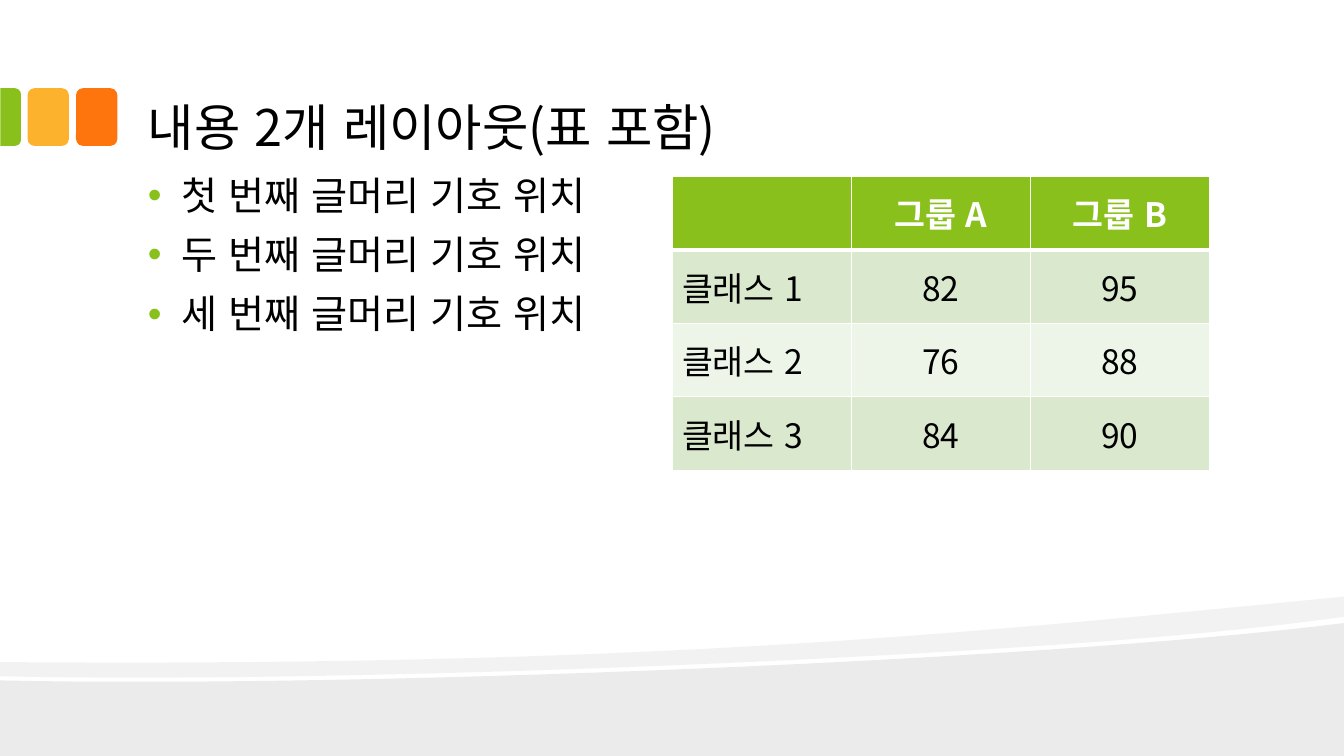
from lxml import etree
from pptx import Presentation
from pptx.dml.color import RGBColor
from pptx.enum.lang import MSO_LANGUAGE_ID
from pptx.enum.shapes import MSO_SHAPE
from pptx.enum.text import MSO_ANCHOR, MSO_AUTO_SIZE, PP_ALIGN
from pptx.oxml import parse_xml
from pptx.oxml.ns import qn
from pptx.util import Pt

KOREAN = MSO_LANGUAGE_ID.KOREAN
ROUNDED, ROUNDED_TOP = MSO_SHAPE.ROUNDED_RECTANGLE, MSO_SHAPE.ROUND_2_SAME_RECTANGLE
TOP, MIDDLE, BOTTOM = MSO_ANCHOR.TOP, MSO_ANCHOR.MIDDLE, MSO_ANCHOR.BOTTOM
LEFT, CENTER = PP_ALIGN.LEFT, PP_ALIGN.CENTER
NO_AUTOFIT = MSO_AUTO_SIZE.NONE
FONT = "Noto Sans CJK KR"
GREEN, YELLOW, ORANGE = "89C01C", "FCB22C", "FE750E"
BLACK, WHITE = "000000", "FFFFFF"
DRAWING_NS = "http://schemas.openxmlformats.org/drawingml/2006/main"
CURVE_STEPS = 30


def paint(fill, hex_color):
    fill.solid()
    fill.fore_color.rgb = RGBColor.from_string(hex_color)


def write(paragraph, text, size, color=BLACK, bold=False):
    """Add one run, with the font set for Latin and Korean letters."""
    run = paragraph.add_run()
    run.text = text
    run.font.size = Pt(size)
    run.font.bold = bold
    run.font.name = FONT
    run.font.language_id = KOREAN
    paint(run.font.fill, color)
    latin = run.font.fill._xPr.find(qn("a:latin"))
    east_asian = etree.Element(qn("a:ea"), typeface=FONT)
    latin.addnext(east_asian)


prs = Presentation()
prs.slide_width, prs.slide_height = Pt(960), Pt(540)
slide = prs.slides.add_slide(prs.slide_layouts[1])
shapes = slide.shapes
title, body = shapes.placeholders
paint(slide.background.fill, WHITE)

# Waves: a two-number step is a line, a six-number step is a cubic curve
waves = [
    (8, (960, 445), [(960, 540), (0, 540), (0, 486),
                     (253.4, 491.8, 750.2, 471.6, 960, 445)]),
    (5, (960, 426.2), [(960, 440.6),
                       (903.6, 448.6, 827.3, 455.8, 740.9, 461.5),
                       (502.6, 477.4, 185.8, 487.4, 0, 483.1), (0, 473),
                       (469.4, 476.6, 699.1, 451.4, 960, 426.2)]),
]
for opacity, start, steps in waves:
    outline = [start]
    for step in steps:
        if len(step) == 2:
            outline.append(step)
            continue
        x0, y0 = outline[-1]
        x1, y1, x2, y2, x3, y3 = step
        for i in range(1, CURVE_STEPS + 1):
            t = i / CURVE_STEPS
            a, b, c, d = (1 - t) ** 3, 3 * t * (1 - t) ** 2, 3 * t * t * (1 - t), t ** 3
            outline.append((a * x0 + b * x1 + c * x2 + d * x3,
                            a * y0 + b * y1 + c * y2 + d * y3))
    points = [(Pt(x), Pt(y)) for x, y in outline]
    builder = shapes.build_freeform(*points[0])
    builder.add_line_segments(points[1:], close=True)
    wave = builder.convert_to_shape()
    wave.shadow.inherit = False
    wave.line.fill.background()
    paint(wave.fill, BLACK)
    wave_color = wave.element.spPr.find(qn("a:solidFill"))[0]
    etree.SubElement(wave_color, qn("a:alpha"), val=str(opacity * 1000))

# Tabs beside the title
tabs = [
    (ROUNDED, 54.3, 63, 29.5, 41.2, 0, ORANGE),
    (ROUNDED, 19.7, 63, 29.5, 41.2, 0, YELLOW),
    (ROUNDED_TOP, -13, 76.2, 41.2, 14.8, 90, GREEN),
]
for preset, left, top, width, height, rotation, color in tabs:
    tab = shapes.add_shape(preset, Pt(left), Pt(top), Pt(width), Pt(height))
    tab.rotation = rotation
    tab.shadow.inherit = False
    tab.line.fill.background()
    paint(tab.fill, color)
    if preset == ROUNDED_TOP:
        tab.adjustments[0] = 0.292

# Title and bullet list, above the background shapes
frames = [
    (title, 12.2, 767.5, 102.2, BOTTOM, 5, 2),
    (body, 126, 384, 360, TOP, 0, 5),
]
for holder, top, width, height, anchor, inset_top, inset_bottom in frames:
    holder.left, holder.top = Pt(96), Pt(top)
    holder.width, holder.height = Pt(width), Pt(height)
    frame = holder.text_frame
    frame.word_wrap = True
    frame.auto_size = NO_AUTOFIT
    frame.vertical_anchor = anchor
    frame.margin_left = frame.margin_right = Pt(9.6)
    frame.margin_top, frame.margin_bottom = Pt(inset_top), Pt(inset_bottom)
    holder.element.getparent().append(holder.element)

heading = title.text_frame.paragraphs[0]
heading.alignment = LEFT
heading.line_spacing = 0.9
write(heading, "내용 2개 레이아웃(표 포함)", 36)

for i, ordinal in enumerate(["첫", "두", "세"]):
    bullet = body.text_frame.paragraphs[0] if i == 0 else body.text_frame.add_paragraph()
    bullet.alignment = LEFT
    bullet.line_spacing = 0.9
    bullet.space_before = Pt(12 if i else 0)
    write(bullet, f"{ordinal} 번째 글머리 기호 위치", 28)
    properties = bullet._p.get_or_add_pPr()
    properties.set("marL", str(Pt(24)))
    properties.set("indent", str(-Pt(24)))
    bullet_color = etree.SubElement(properties, qn("a:buClr"))
    etree.SubElement(bullet_color, qn("a:srgbClr"), val=GREEN)
    etree.SubElement(properties, qn("a:buFont"), typeface="Arial")
    etree.SubElement(properties, qn("a:buChar"), char="•")

# Score table
scores = [
    ["", "그룹 A", "그룹 B"],
    ["클래스 1", "82", "95"],
    ["클래스 2", "76", "88"],
    ["클래스 3", "84", "90"],
]
row_fills = [GREEN, "DAE8CD", "EDF4E8", "DAE8CD"]
table = shapes.add_table(4, 3, Pt(480), Pt(126), Pt(384), Pt(210)).table
for r, row in enumerate(scores):
    table.rows[r].height = Pt(52.5)
    for c, text in enumerate(row):
        cell = table.cell(r, c)
        cell.vertical_anchor = MIDDLE
        paint(cell.fill, row_fills[r])
        entry = cell.text_frame.paragraphs[0]
        entry.alignment = CENTER if c else LEFT
        if text:
            write(entry, text, 24, BLACK if r else WHITE, bold=r == 0)
        cell_properties = cell._tc.get_or_add_tcPr()
        for position, side in enumerate(["lnL", "lnR", "lnT", "lnB"]):
            header_rule = (r, side) in [(0, "lnB"), (1, "lnT")]
            border = parse_xml(
                f'<a:{side} xmlns:a="{DRAWING_NS}" w="{Pt(3 if header_rule else 1)}">'
                f'<a:solidFill><a:srgbClr val="{WHITE}"/></a:solidFill></a:{side}>')
            cell_properties.insert(position, border)

body.element.getparent().append(body.element)

prs.save("out.pptx")
